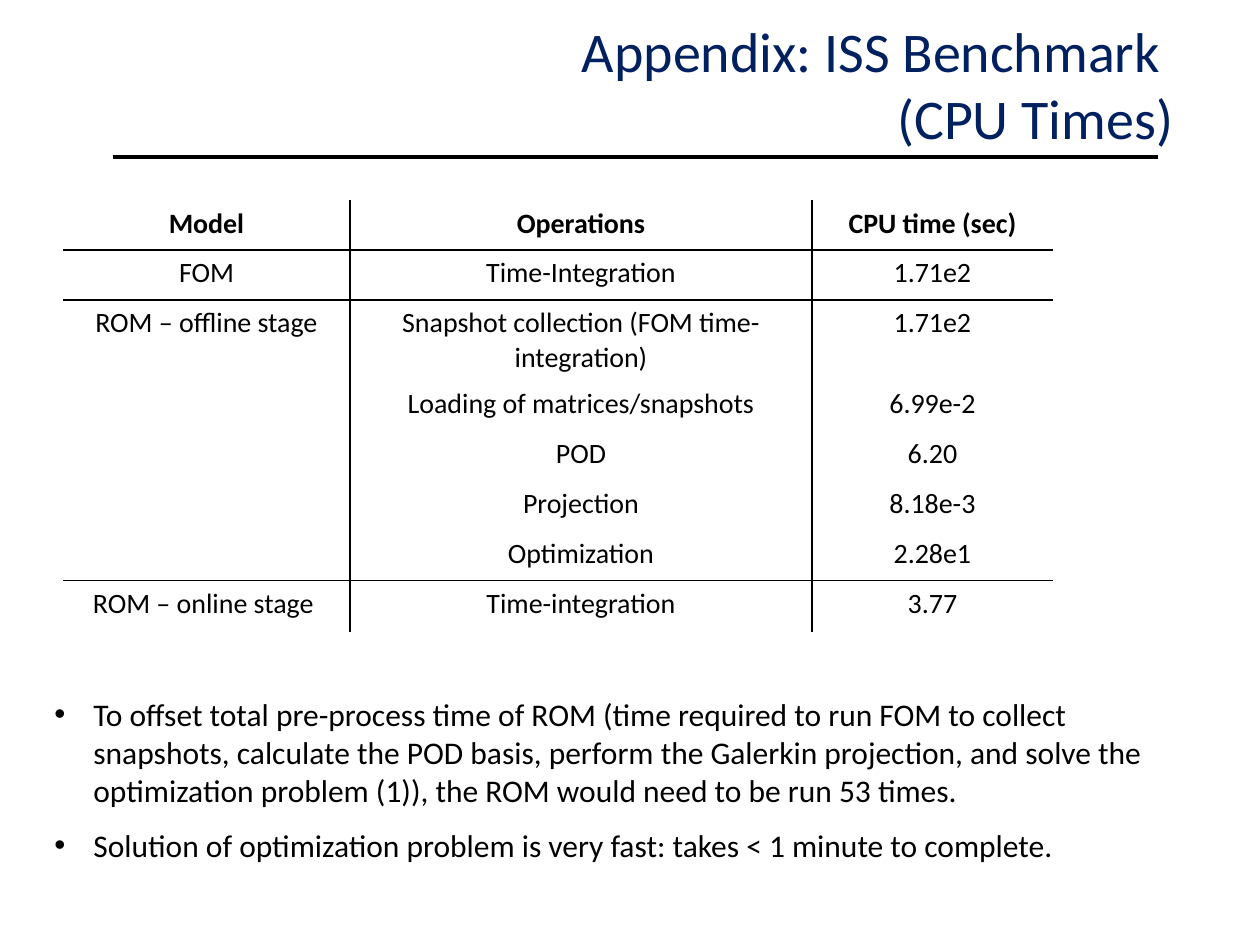
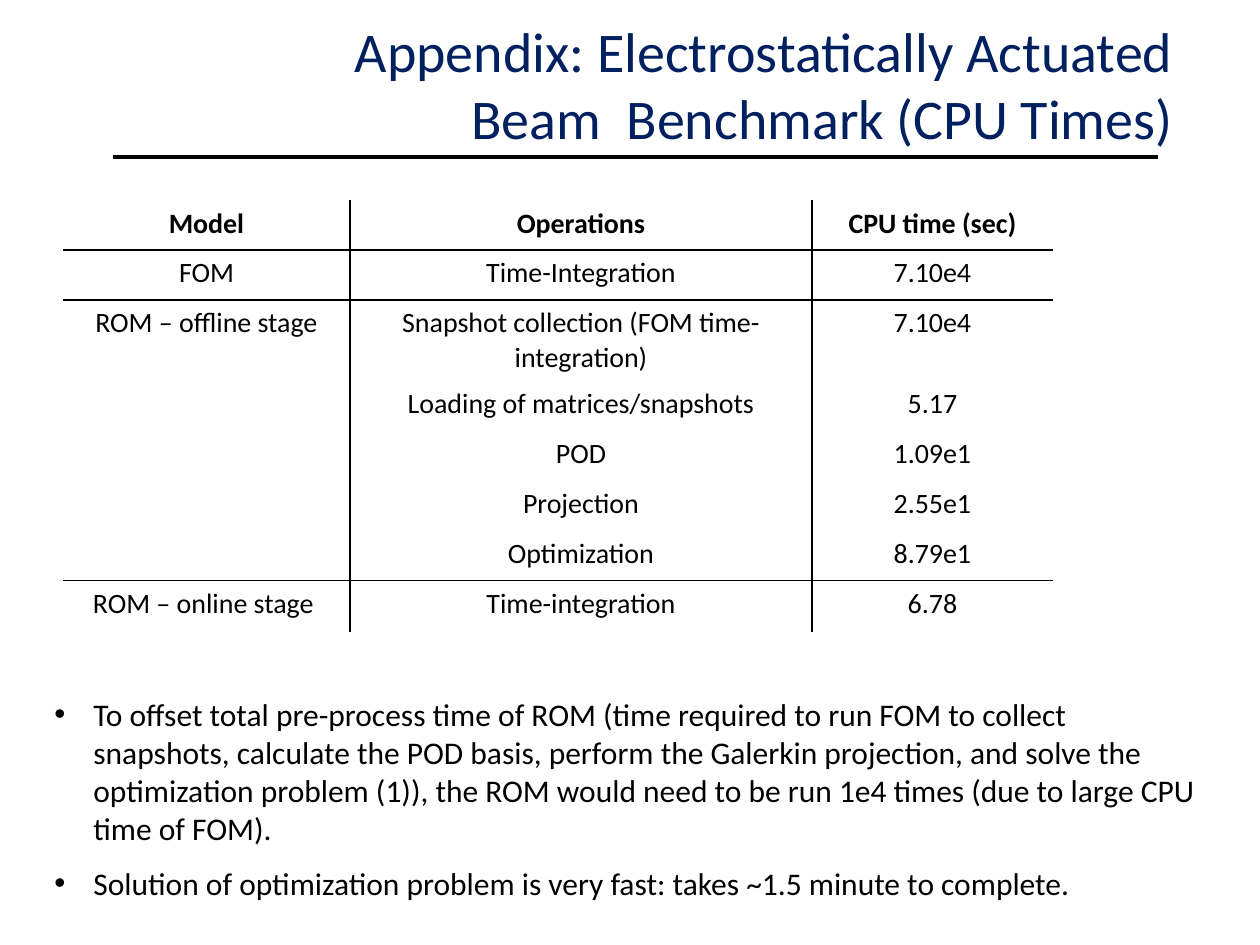
from dataclasses import dataclass

from lxml.etree import SubElement, Element
from pptx import Presentation
from pptx.dml.color import RGBColor
from pptx.enum.shapes import MSO_CONNECTOR as Link
from pptx.enum.text import MSO_AUTO_SIZE as Fit, PP_ALIGN as Align
from pptx.oxml.ns import qn
from pptx.util import Emu, Pt

NAVY = RGBColor(0x00, 0x20, 0x60)
BLACK = RGBColor(0x00, 0x00, 0x00)
FONT = "Calibri"
SCALE = 914400 / 126
WIDE, HIGH = 1260, 945
COLS = (287, 462, 241)
ROWS = (50, 50, 81, 50, 50, 50, 50, 51)
RULED = (0, 1, 6)
INDENT = 39
HEAD = ("Model", "Operations", "CPU time (sec)")
STEPS = (
    ("FOM", "Time-Integration"),
    ("ROM – offline stage", "Snapshot collection (FOM time-integration)"),
    ("", "Loading of matrices/snapshots"),
    ("", "POD"),
    ("", "Projection"),
    ("", "Optimization"),
    ("ROM – online stage ", "Time-integration"),
)
OFFSET = (
    "To offset total pre-process time of ROM (time required to run FOM to collect "
    "snapshots, calculate the POD basis, perform the Galerkin projection, and solve "
    "the optimization problem (1)), the ROM would need to be run "
)
SPEED = "Solution of optimization problem is very fast: takes "


@dataclass(frozen=True)
class Box:
    left: int
    top: int
    width: int
    height: int

    def emu(self) -> tuple:
        return tuple(map(px, (self.left, self.top, self.width, self.height)))


@dataclass(frozen=True)
class Page:
    title: tuple
    place: Box
    times: tuple
    runs: str
    speed: str
    notes: Box


PAGES = (
    Page(
        ("Appendix: ISS Benchmark ", "(CPU Times)"),
        Box(365, 10, 821, 149),
        ("1.71e2", "1.71e2", "6.99e-2", "6.20", "8.18e-3", "2.28e1", "3.77"),
        "53 times.",
        "< 1 minute to complete.",
        Box(42, 689, 1176, 183),
    ),
    Page(
        ("Appendix: Electrostatically Actuated Beam  Benchmark (CPU Times)",),
        Box(283, 10, 903, 149),
        ("7.10e4", "7.10e4", "5.17", "1.09e1", "2.55e1", "8.79e1", "6.78"),
        "1e4 times (due to large CPU time of FOM).",
        "~1.5 minute to complete.",
        Box(42, 689, 1176, 221),
    ),
)


def px(size: int) -> Emu:
    return Emu(round(size * SCALE))


def style(para, size: int, color: RGBColor = BLACK, bold: bool = False) -> None:
    font = para.font
    font.name, font.size, font.bold = FONT, Pt(size), bold
    font.color.rgb = color


def write(slide, box: Box, texts: tuple) -> list:
    frame = slide.shapes.add_textbox(*box.emu()).text_frame
    frame.word_wrap = True
    frame.auto_size = Fit.SHAPE_TO_FIT_TEXT
    frame.text = "\n".join(texts)
    return list(frame.paragraphs)


def add_title(slide, page: Page) -> None:
    rule = slide.shapes.add_connector(
        Link.STRAIGHT, px(113), px(157), px(1158), px(157)
    )
    rule.line.color.rgb = BLACK
    rule.line.width = Pt(2)
    SubElement(rule._element.spPr, qn("a:effectLst"))
    for para in write(slide, page.place, page.title):
        para.alignment = Align.RIGHT
        style(para, 32, NAVY)


def edge(cell, sides: dict) -> None:
    props = cell._tc.get_or_add_tcPr()
    for spot, (side, shown) in enumerate(sides.items()):
        line = Element(qn(f"a:ln{side}"), w=str(Pt(1)))
        if shown:
            fill = SubElement(line, qn("a:solidFill"))
            SubElement(fill, qn("a:srgbClr"), val=str(BLACK))
        else:
            SubElement(line, qn("a:noFill"))
        props.insert(spot, line)


def add_times(slide, times: tuple) -> None:
    data = [HEAD] + [(*step, time) for step, time in zip(STEPS, times)]
    box = Box(63, 200, sum(COLS), sum(ROWS))
    table = slide.shapes.add_table(len(ROWS), len(COLS), *box.emu()).table
    table.first_row = table.horz_banding = False
    for col, width in zip(table.columns, COLS):
        col.width = px(width)
    for row, height in zip(table.rows, ROWS):
        row.height = px(height)
    for r, texts in enumerate(data):
        for c, text in enumerate(texts):
            cell = table.cell(r, c)
            cell.text = text
            cell.fill.background()
            para = cell.text_frame.paragraphs[0]
            para.alignment = Align.CENTER
            style(para, 16, bold=r == 0)
            edge(cell, {
                "L": c > 0,
                "R": c < len(COLS) - 1,
                "T": r - 1 in RULED,
                "B": r in RULED,
            })


def add_notes(slide, page: Page) -> None:
    texts = (OFFSET + page.runs, SPEED + page.speed)
    for spot, para in enumerate(write(slide, page.notes, texts)):
        props = para._p.get_or_add_pPr()
        props.set("marL", str(px(INDENT)))
        props.set("indent", str(px(-INDENT)))
        SubElement(props, qn("a:buFont"), typeface="Arial")
        SubElement(props, qn("a:buChar"), char="•")
        if spot:
            para.space_before = Pt(10)
        style(para, 18)


def main() -> None:
    deck = Presentation()
    deck.slide_width, deck.slide_height = px(WIDE), px(HIGH)
    for page in PAGES:
        slide = deck.slides.add_slide(deck.slide_layouts[6])
        add_title(slide, page)
        add_times(slide, page.times)
        add_notes(slide, page)
    deck.save("out.pptx")


if __name__ == "__main__":
    main()
